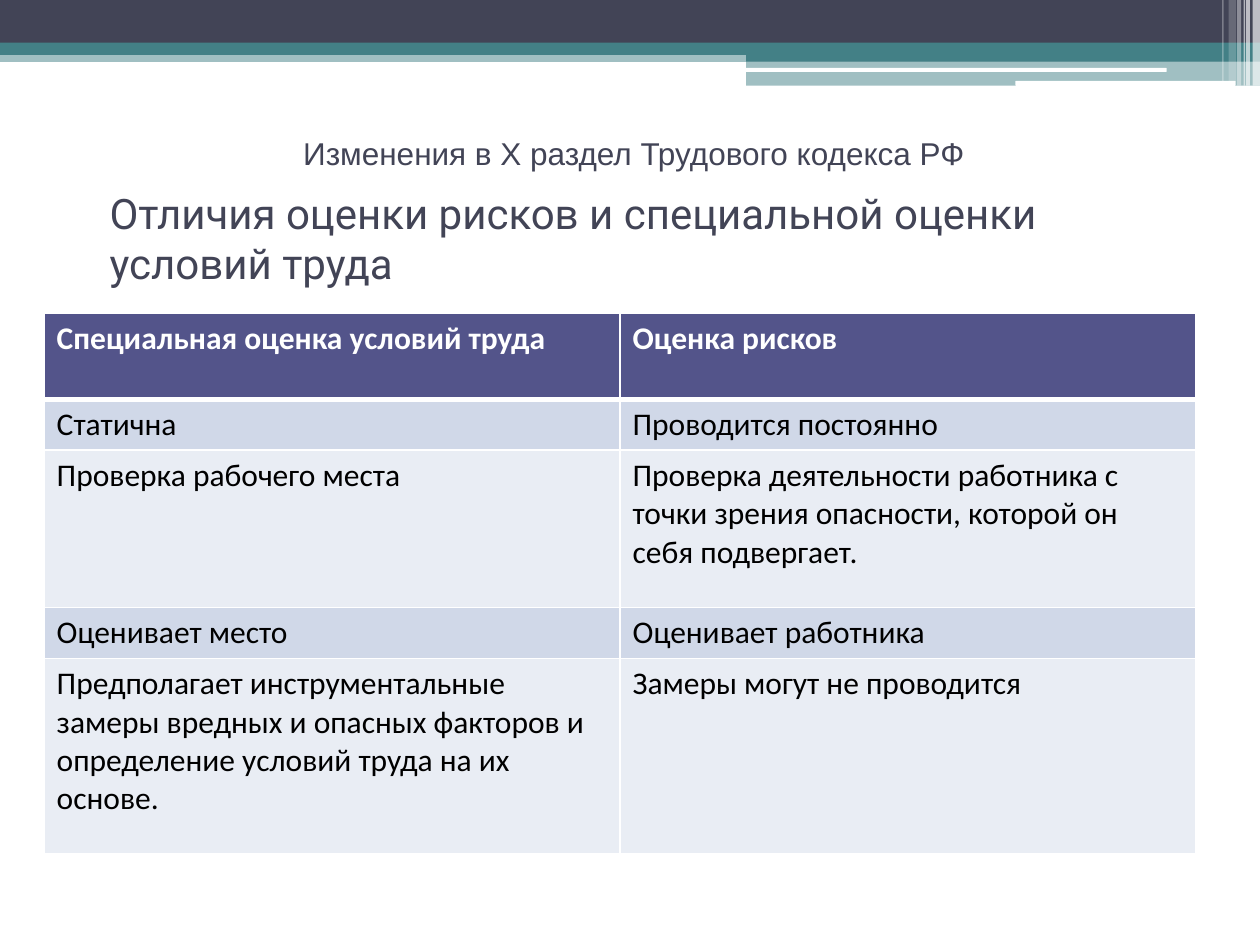
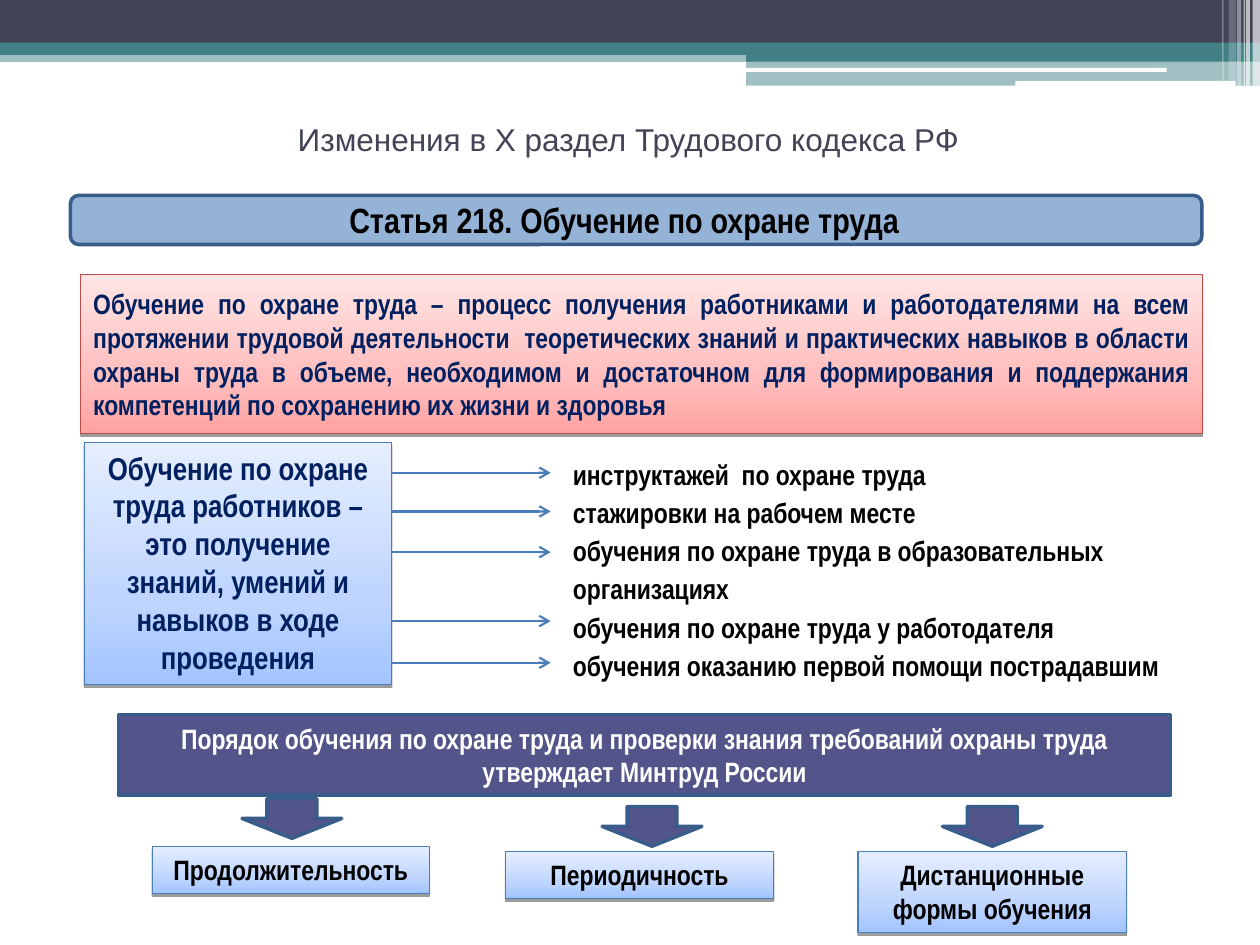
from copy import deepcopy
from lxml import etree
from pptx import Presentation, util as u
from pptx.dml.color import RGBColor
from pptx.enum import shapes, text
from pptx.oxml import parse_xml
from pptx.oxml.ns import nsdecls, qn

KIND = shapes.MSO_SHAPE
MID, TOP = text.MSO_ANCHOR.MIDDLE, text.MSO_ANCHOR.TOP
LEFT, CENTER, FULL = text.PP_ALIGN.LEFT, text.PP_ALIGN.CENTER, text.PP_ALIGN.JUSTIFY

INK, TEAL, WHITE, BLACK = "424456", "438086", "FFFFFF", "000000"
PLUM, EDGE, BLUE, NAVY, RED = "53548A", "385D8A", "4A7EBB", "002060", "BE4B48"
ICE = ("E5EEFF", "BFD5FF", "A3C4FF")
ROSE = ("FFE5E5", "FFBEBD", "FFA2A1")

BANDS = [
    (0, 1.02, 25.4, 0.23, TEAL, 50),
    (0, 0, 25.4, 0.87, INK, 100),
    (0, 0.86, 25.4, 0.25, TEAL, 100),
    (15.04, 0.99, 10.36, 0.25, TEAL, 100),
    (15.04, 1.23, 10.36, 0.5, TEAL, 50),
]
PILLS = [(15.01, 1.37, 8.51, 0.08), (20.47, 1.63, 4.44, 0.1)]
STRIPES = [
    (25.25, 0.15, 1.73, 65), (25.12, 0.08, 1.73, 65), (25.07, 0.03, 1.73, 60),
    (24.94, 0.08, 1.73, 40), (24.77, 0.15, 1.63, 20), (24.64, 0.03, 1.63, 30),
]

HEAD = "Изменения в Х раздел Трудового кодекса РФ"
TITLE = "Отличия оценки рисков и специальной оценки условий труда"
ROWS = [
    (1.73, "Специальная оценка условий труда", "Оценка рисков"),
    (1.02, "Статична", "Проводится постоянно"),
    (3.18, "Проверка рабочего места",
     "Проверка деятельности работника с точки зрения опасности, которой он себя подвергает."),
    (1.02, "Оценивает место", "Оценивает работника"),
    (3.94, "Предполагает инструментальные замеры вредных и опасных факторов "
     "и определение условий труда на их основе.", "Замеры могут не проводится"),
]
WIDE = 11.61

CLAUSE = "Статья 218. Обучение по охране труда"
MEANING = ("Обучение по охране труда – процесс получения работниками и работодателями "
           "на всем протяжении трудовой деятельности  теоретических знаний и практических "
           "навыков в области охраны труда в объеме, необходимом и достаточном для "
           "формирования и поддержания компетенций по сохранению их жизни и здоровья")
GAIN = ("Обучение по охране труда работников – это получение знаний, "
        "умений и навыков в ходе проведения")
FORMS = [
    (9.53, "инструктажей  по охране труда"),
    (10.31, "стажировки на рабочем месте"),
    (11.13, "обучения по охране труда в образовательных организациях"),
    (12.52, "обучения по охране труда у работодателя"),
    (13.36, "обучения оказанию первой помощи пострадавшим"),
]
ORDER = ("Порядок обучения по охране труда и проверки знания требований охраны труда "
         "утверждает Минтруд России")
PARTS = [
    ("Продолжительность", (3.07, 17.07, 5.59, 0.94), (4.88, 16.1)),
    ("Периодичность", (10.19, 17.17, 5.41, 0.94), (12.14, 16.26)),
    ("Дистанционные формы обучения", (17.3, 17.17, 5.41, 1.63), (19, 16.26)),
]


def rgb(code):
    return RGBColor.from_string(code)


def cms(*nums):
    return [u.Cm(n) for n in nums]


def put(obj, vals):
    for key, val in vals.items():
        setattr(obj, key, val)


def write(frame, lines, size, face, color, bold=False, align=LEFT, gap=None):
    frame.word_wrap = True
    for i, line in enumerate(lines):
        para = frame.add_paragraph() if i else frame.paragraphs[0]
        put(para, {"alignment": align, "line_spacing": gap})
        run = para.add_run()
        run.text = line
        put(run.font, {"size": u.Pt(size), "name": face, "bold": bold})
        run.font.color.rgb = rgb(color)


def blend(fill, tones):
    fill.gradient()
    fill.gradient_angle = 270
    first, last = fill.gradient_stops
    first.color.rgb, last.color.rgb = rgb(tones[0]), rgb(tones[2])
    stops = last._gs.getparent()
    stops.insert(1, deepcopy(first._gs))
    mid = fill.gradient_stops[1]
    mid.position = 0.65
    mid.color.rgb = rgb(tones[1])


def block(page, kind, box, fill, line=None, width=1, alpha=100):
    part = page.shapes.add_shape(kind, *cms(*box))
    part.shadow.inherit = False
    if isinstance(fill, tuple):
        blend(part.fill, fill)
        part._element.spPr.find(qn("a:effectLst")).append(parse_xml(
            f'<a:outerShdw {nsdecls("a")} blurRad="0" dist="20320" dir="5400000" '
            'rotWithShape="0"><a:srgbClr val="000000"><a:alpha val="38000"/>'
            '</a:srgbClr></a:outerShdw>'))
    else:
        part.fill.solid()
        part.fill.fore_color.rgb = rgb(fill)
    if alpha < 100:
        tone = part._element.spPr.find(qn("a:solidFill"))[0]
        etree.SubElement(tone, qn("a:alpha")).set("val", str(alpha * 1000))
    if line:
        part.line.color.rgb = rgb(line)
        part.line.width = u.Pt(width)
    else:
        part.line.fill.background()
    return part


def panel(page, box, words, fill, line, width, size, color,
          align=CENTER, anchor=MID, kind=KIND.RECTANGLE):
    part = block(page, kind, box, fill, line, width)
    part.text_frame.vertical_anchor = anchor
    write(part.text_frame, [words], size, "Arial Narrow", color, True, align)
    return part


def label(page, box, lines, *look, **more):
    frame = page.shapes.add_textbox(*cms(*box)).text_frame
    frame.vertical_anchor = MID
    write(frame, lines, *look, **more)


def start(deck, left, top):
    page = deck.slides.add_slide(deck.slide_layouts[6])
    for *box, color, alpha in BANDS:
        block(page, KIND.RECTANGLE, box, color, alpha=alpha)
    for box in PILLS:
        block(page, KIND.ROUNDED_RECTANGLE, box, WHITE)
    for x, wide, high, alpha in STRIPES:
        block(page, KIND.RECTANGLE, (x, 0, wide, high), WHITE, alpha=alpha)
    label(page, (left, top, 22.86, 1.5), [HEAD], 18, "Arial", INK, align=CENTER)
    return page


def frame_cell(cell, row):
    thick = {"L": 1, "R": 1, "T": 3 if row == 1 else 1, "B": 3 if row == 0 else 1}
    props = cell._tc.get_or_add_tcPr()
    for side, width in thick.items():
        props.append(parse_xml(
            f'<a:ln{side} {nsdecls("a")} w="{width * 12700}"><a:solidFill>'
            f'<a:srgbClr val="{WHITE}"/></a:solidFill></a:ln{side}>'))


def compare(deck):
    page = start(deck, 1.35, 2.34)
    label(page, (1.96, 3.33, 21.54, 2.92), [TITLE], 24, "Roboto", INK)
    high = sum(row[0] for row in ROWS)
    grid = page.shapes.add_table(len(ROWS), 2, *cms(0.89, 6.32, 2 * WIDE, high)).table
    for col in grid.columns:
        col.width = u.Cm(WIDE)
    for r, (tall, *words) in enumerate(ROWS):
        grid.rows[r].height = u.Cm(tall)
        for c, word in enumerate(words):
            cell = grid.cell(r, c)
            frame_cell(cell, r)
            cell.fill.solid()
            shade = PLUM if r == 0 else ("E9EDF4", "D0D8E8")[r % 2]
            cell.fill.fore_color.rgb = rgb(shade)
            write(cell.text_frame, [word], 18, "Calibri", BLACK if r else WHITE, r == 0)


def arrow(page, y):
    wire = page.shapes.add_connector(shapes.MSO_CONNECTOR.STRAIGHT, *cms(7.9, y, 11.1, y))
    wire.line.color.rgb = rgb(BLUE)
    wire.line.width = u.Pt(1.25)
    etree.SubElement(wire.line._get_or_add_ln(), qn("a:tailEnd")).set("type", "arrow")
    etree.SubElement(wire._element.spPr, qn("a:effectLst"))


def train(deck):
    page = start(deck, 1.24, 2.06)
    bar = panel(page, (1.42, 3.94, 22.81, 0.99), CLAUSE, "95B3D7", EDGE, 2, 20, BLACK,
                kind=KIND.ROUNDED_RECTANGLE)
    bar.text_frame.margin_right = u.Cm(0.73)
    panel(page, (1.7, 8.92, 6.2, 4.88), GAIN, ICE, BLUE, 0.75, 18, NAVY, anchor=TOP)
    label(page, (11.3, 8.97, 13.41, 4.93), [form for _, form in FORMS],
          16, "Arial Narrow", BLACK, True, gap=1.14)
    for y, _ in FORMS:
        arrow(page, y)
    panel(page, (2.39, 14.4, 21.21, 1.63), ORDER, PLUM, EDGE, 2, 16, WHITE)
    for word, box, spot in PARTS:
        panel(page, box, word, ICE, BLUE, 0.75, 16, BLACK, anchor=TOP)
        block(page, KIND.DOWN_ARROW, (*spot, 2.01, 0.8), PLUM, EDGE, 2)
    panel(page, (1.63, 5.54, 22.61, 3.2), MEANING, ROSE, RED, 0.75, 16, NAVY, FULL)


def main():
    deck = Presentation()
    put(deck, {"slide_width": u.Cm(25.4), "slide_height": u.Cm(19.05)})
    compare(deck)
    train(deck)
    deck.save("out.pptx")


if __name__ == "__main__":
    main()
